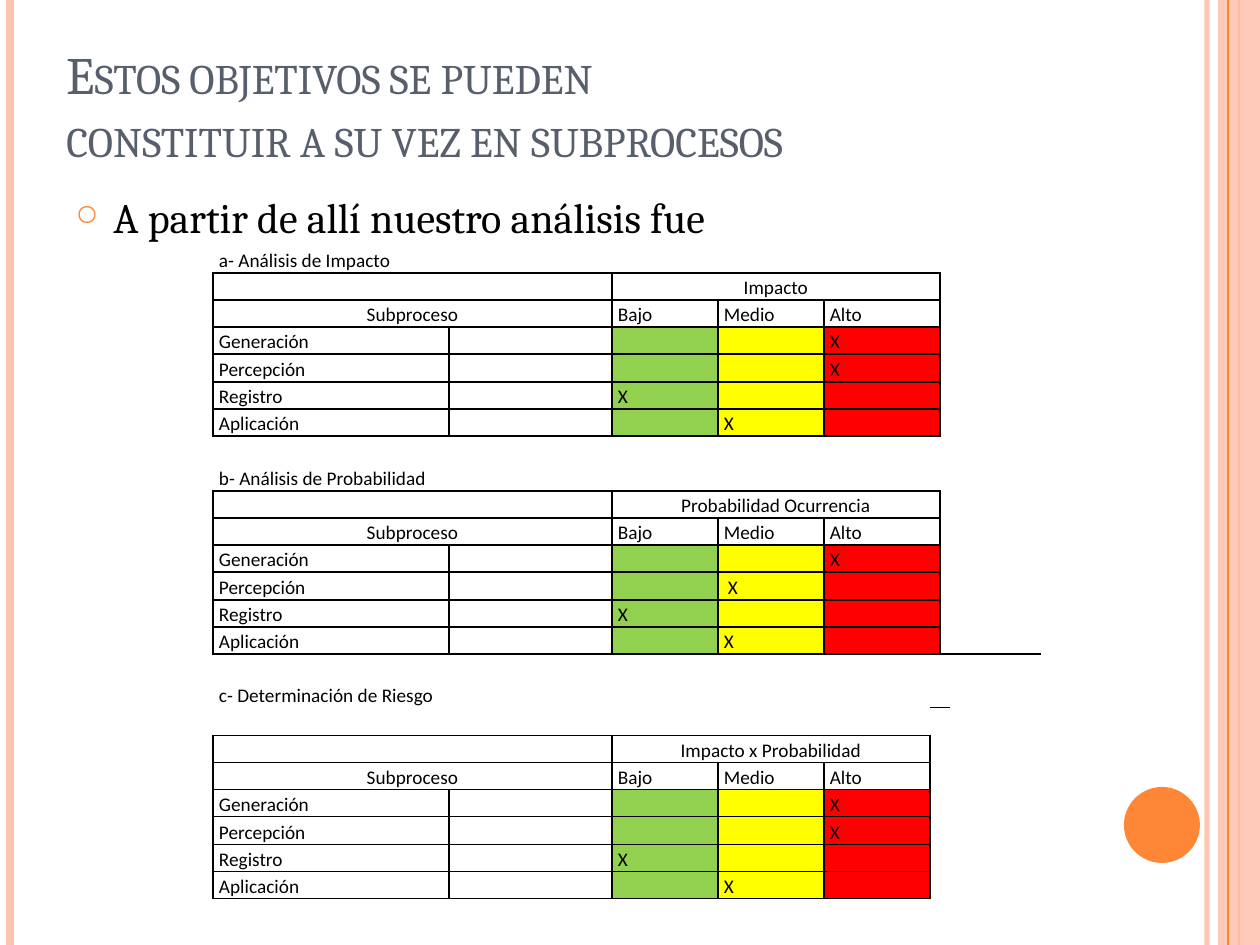
"""Build the slide with the impact, probability and risk matrices of the subprocesses."""
from lxml.etree import SubElement
from pptx import Presentation
from pptx.dml.color import RGBColor
from pptx.enum.shapes import MSO_CONNECTOR, MSO_SHAPE
from pptx.enum.text import MSO_ANCHOR, PP_ALIGN
from pptx.oxml.ns import qn
from pptx.util import Inches, Pt

PX = 7257
BLACK, ORANGE, PEACH, SLATE = "000000", "FE8637", "FEC3AE", "575F6D"
LEVELS = {2: ("Bajo", "92D050"), 3: ("Medio", "FFFF00"), 4: ("Alto", "FF0000")}
SUBPROCESSES = ("Generación", "Percepción", "Registro", "Aplicación")


def paint(fill, color, opacity=100):
    fill.solid()
    fill.fore_color.rgb = RGBColor.from_string(color)
    if opacity < 100:
        tint = fill._xPr.find(".//" + qn("a:srgbClr"))
        SubElement(tint, qn("a:alpha"), val=str(opacity * 1000))


def write(frame, text, font="Calibri", size=11, color=BLACK, align=PP_ALIGN.LEFT,
          spacing=1.0, before=0, small_caps=False):
    frame.word_wrap = True
    paragraph = frame.paragraphs[0]
    paragraph.text = text
    paragraph.alignment = align
    paragraph.line_spacing = spacing
    paragraph.space_before = Pt(before)
    for run in paragraph.runs:
        run.font.name = font
        run.font.size = Pt(size)
        paint(run.font.fill, color)
        if small_caps:
            run.font._element.set("cap", "small")
    SubElement(paragraph._p, qn("a:endParaRPr"), sz=str(size * 100))
    return paragraph


prs = Presentation()
prs.slide_width, prs.slide_height = Inches(10), Inches(7.5)
slide = prs.slides.add_slide(prs.slide_layouts[6])
shapes = slide.shapes

stripes = [(1207, PEACH, 3, 93), (10, PEACH, 4.5, 100), (1239, ORANGE, 1.5, 100),
           (1228, ORANGE, 0.75, 100)]
for x, color, width, opacity in stripes:
    if x == 1228:
        band = shapes.add_shape(MSO_SHAPE.RECTANGLE, 1218 * PX, 0, 42 * PX, 945 * PX)
        band.shadow.inherit = False
        band.line.fill.background()
        paint(band.fill, PEACH, 87)
    stripe = shapes.add_connector(MSO_CONNECTOR.STRAIGHT, x * PX, 0, x * PX, 945 * PX)
    stripe.line.width = Pt(width)
    paint(stripe.line.fill, color, opacity)
    SubElement(stripe._element.spPr, qn("a:effectLst"))

disc = shapes.add_shape(MSO_SHAPE.OVAL, 1124 * PX, 787 * PX, 76 * PX, 76 * PX)
disc.shadow.inherit = False
disc.line.fill.background()
paint(disc.fill, ORANGE)

title = shapes.add_textbox(54 * PX, 16 * PX, 1029 * PX, 158 * PX).text_frame
title.vertical_anchor = MSO_ANCHOR.BOTTOM
write(title, "Estos objetivos se pueden \vconstituir a su vez en subprocesos",
      font="Cambria", size=30, color=SLATE, small_caps=True)

body = shapes.add_textbox(63 * PX, 185 * PX, 1029 * PX, 672 * PX).text_frame
intro = write(body, "A partir de allí nuestro análisis fue", font="Cambria", size=24, before=6)
bullet = intro._p.get_or_add_pPr()
bullet.set("marL", str(38 * PX))
bullet.set("indent", str(-38 * PX))
SubElement(SubElement(bullet, qn("a:buClr")), qn("a:srgbClr"), val=ORANGE)
SubElement(bullet, qn("a:buSzPct"), val="70000")
SubElement(bullet, qn("a:buChar"), char="○")

column_widths = (236, 163, 106, 106, 106, 10, 10, 91)
row_heights = [54 if row == 15 else 27 + (row % 4 == 0) for row in range(23)]
matrix_frame = shapes.add_table(23, 8, 213 * PX, 245 * PX, sum(column_widths) * PX,
                                sum(row_heights) * PX)
matrix = matrix_frame.table
matrix.first_row = matrix.horz_banding = False
matrix._tbl.tblPr.find(qn("a:tableStyleId")).text = "{2D5ABB26-0587-4C30-8999-92F81FD0307C}"
for column, width in zip(matrix.columns, column_widths):
    column.width = width * PX
for row, height in zip(matrix.rows, row_heights):
    row.height = height * PX

texts, fills, borders = {}, {}, {(15, 5): ("lnT",)}
blocks = [
    (0, 1, 7, 5, "a- Análisis de Impacto", "Impacto", (4, 4, 2, 3)),
    (8, 9, 14, 5, "b- Análisis de Probabilidad", "Probabilidad Ocurrencia", (4, 3, 2, 3)),
    (15, 17, 22, 4, "c- Determinación de Riesgo", "Impacto x Probabilidad", (4, 4, 2, 3)),
]
for first, header, last, edge, label, heading, marks in blocks:
    texts[first, 0] = label
    texts[header, 2] = heading
    texts[header + 1, 0] = "Subproceso"
    for col, (level, color) in LEVELS.items():
        texts[header + 1, col] = level
        for row in range(header + 2, header + 6):
            fills[row, col] = color
    for row, (subprocess, mark) in enumerate(zip(SUBPROCESSES, marks), header + 2):
        texts[row, 0] = subprocess
        texts[row, mark] = "X"
    for row in range(header, header + 6):
        for col in range(edge + 1):
            borders[row, col] = ("lnL", "lnR", "lnT", "lnB")
    for row in range(first, last + 1):
        if row in (first, header, header + 1):
            matrix.cell(row, 0).merge(matrix.cell(row, 1))
        start = 2 if row == header else 4
        if start < edge:
            matrix.cell(row, start).merge(matrix.cell(row, edge))
        matrix.cell(row, edge + 1).merge(matrix.cell(row, edge + 2))

headers = {(header + step, col) for _, header, *_ in blocks for step, col in ((0, 2), (1, 0))}
for row in range(23):
    for col in range(8):
        cell = matrix.cell(row, col)
        cell.vertical_anchor = MSO_ANCHOR.BOTTOM
        cell.margin_left = (10 if (row, col) == (12, 3) else 6) * PX
        cell.margin_right = 6 * PX
        cell.margin_top = cell.margin_bottom = 0
        align = PP_ALIGN.CENTER if (row, col) in headers else PP_ALIGN.LEFT
        write(cell.text_frame, texts.get((row, col), ""), align=align, spacing=1.15)
        for side in borders.get((row, col), ()):
            edge_line = SubElement(cell._tc.get_or_add_tcPr(), qn("a:" + side), w="12700")
            SubElement(SubElement(edge_line, qn("a:solidFill")), qn("a:srgbClr"), val=BLACK)
        if (row, col) in fills:
            paint(cell.fill, fills[row, col])
        else:
            cell.fill.background()

prs.save("out.pptx")
